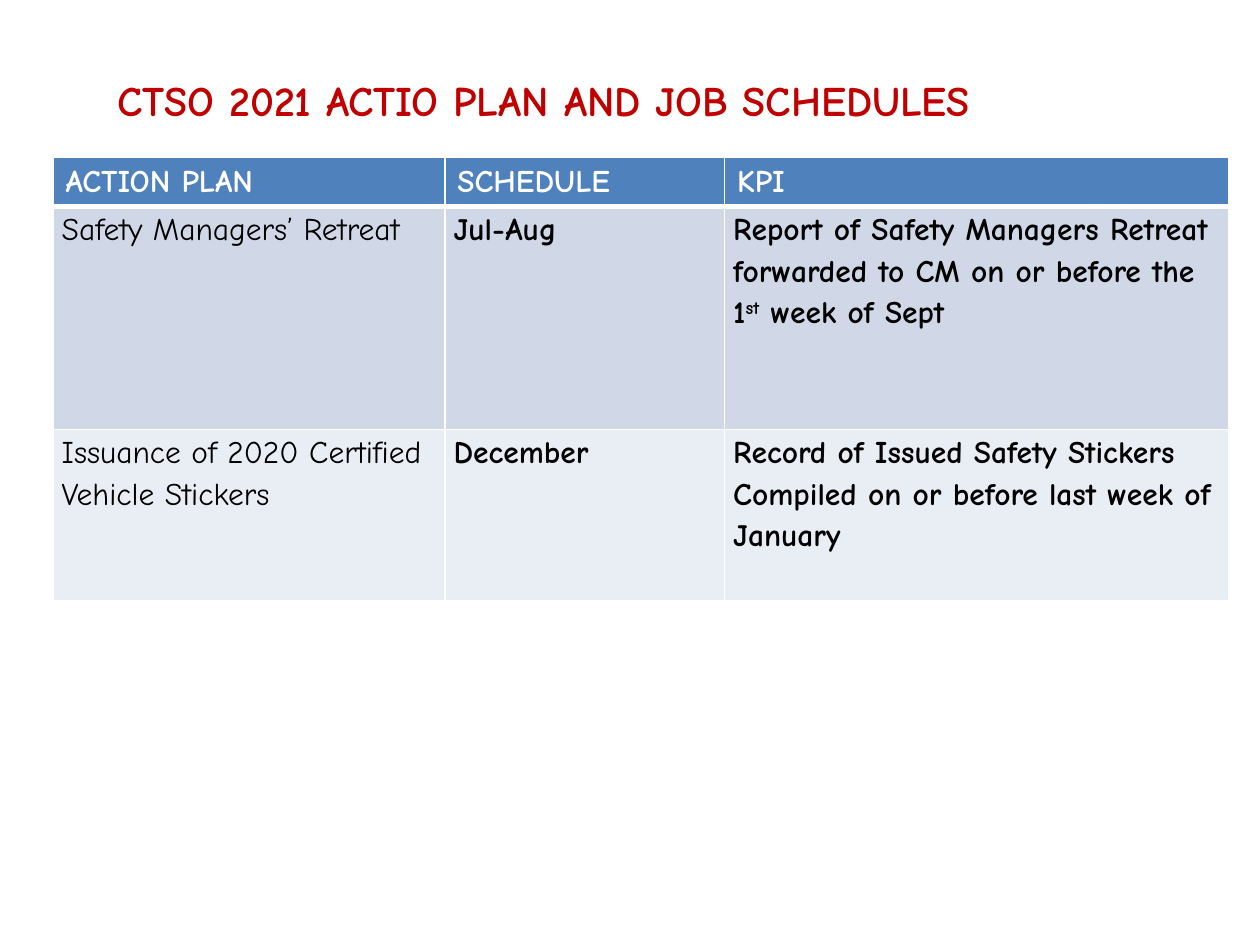
from dataclasses import dataclass

from lxml import etree
from pptx import Presentation
from pptx.dml.color import RGBColor
from pptx.enum import text
from pptx.oxml import ns
from pptx.util import Inches, Pt


@dataclass(frozen=True)
class Theme:
    font: str = "Comic Neue"
    title_size: int = 24
    table_size: int = 18
    title: str = "C00000"
    header: str = "4F81BD"
    bands: tuple = ("D0D8E8", "E9EDF4")
    light: str = "FFFFFF"
    dark: str = "000000"


THEME = Theme()

COLUMN_WIDTHS = (3.11, 2.22, 4)
ROW_HEIGHTS = (0.38, 1.77, 1.36)
HEADERS = ("ACTION PLAN", "SCHEDULE", "KPI")
# Each cell is a list of (text, superscript) runs
PLAN_ROWS = (
    (
        [("Safety Managers’ Retreat", False)],
        [("Jul-Aug", False)],
        [
            ("Report of Safety Managers Retreat forwarded to CM on or before the 1", False),
            ("st", True),
            (" week of Sept", False),
        ],
    ),
    (
        [("Issuance of 2020 Certified Vehicle Stickers", False)],
        [("December", False)],
        [("Record of Issued Safety Stickers Compiled on or before last week of January", False)],
    ),
)


def add_span(para, words, size, color, bold=True, superscript=False):
    span = para.add_run()
    span.text = words
    span.font.name = THEME.font
    span.font.size = Pt(size)
    span.font.bold = bold
    span.font.color.rgb = RGBColor.from_string(color)
    if superscript:
        span.font._element.set("baseline", "30000")


def set_borders(cell, bottom_width):
    """Draw white cell borders; they must precede the fill in the XML."""
    properties = cell._tc.get_or_add_tcPr()
    widths = {"lnL": 1, "lnR": 1, "lnT": 1, "lnB": bottom_width}
    for index, (side, width) in enumerate(widths.items()):
        line = etree.Element(ns.qn(f"a:{side}"), w=str(Pt(width)))
        fill = etree.SubElement(line, ns.qn("a:solidFill"))
        etree.SubElement(fill, ns.qn("a:srgbClr"), val=THEME.light)
        properties.insert(index, line)


def style_cell(cell, color, bottom_width=1):
    cell.fill.solid()
    cell.fill.fore_color.rgb = RGBColor.from_string(color)
    set_borders(cell, bottom_width)


def add_title(page, words):
    box = page.shapes.title
    box.left, box.top = Inches(0.83), Inches(0.42)
    box.width, box.height = Inches(8.5), Inches(0.75)
    box.text_frame.vertical_anchor = text.MSO_ANCHOR.MIDDLE
    para = box.text_frame.paragraphs[0]
    para.alignment = text.PP_ALIGN.LEFT
    add_span(para, words, THEME.title_size, THEME.title)


def fill_header_cell(cell, words):
    style_cell(cell, THEME.header, bottom_width=3)
    add_span(cell.text_frame.paragraphs[0], words, THEME.table_size, THEME.light)


def fill_body_cell(cell, runs, color, bold):
    style_cell(cell, color)
    cell.margin_left = cell.margin_right = Inches(0.07)
    cell.margin_top = cell.margin_bottom = 0
    para = cell.text_frame.paragraphs[0]
    para.line_spacing = 1.15
    for words, superscript in runs:
        add_span(para, words, THEME.table_size, THEME.dark, bold, superscript)


def add_plan_table(page):
    frame = page.shapes.add_table(
        len(ROW_HEIGHTS), len(COLUMN_WIDTHS), Inches(0.42), Inches(1.25),
        Inches(sum(COLUMN_WIDTHS)), Inches(sum(ROW_HEIGHTS)),
    )
    table = frame.table
    for column, width in zip(table.columns, COLUMN_WIDTHS):
        column.width = Inches(width)
    for row, height in zip(table.rows, ROW_HEIGHTS):
        row.height = Inches(height)

    # Header row
    for column, words in enumerate(HEADERS):
        fill_header_cell(table.cell(0, column), words)

    # Body rows: only the action names are in regular weight
    for row, (contents, color) in enumerate(zip(PLAN_ROWS, THEME.bands), start=1):
        for column, runs in enumerate(contents):
            fill_body_cell(table.cell(row, column), runs, color, bold=column > 0)


def main():
    deck = Presentation()
    deck.slide_width, deck.slide_height = Inches(10), Inches(7.5)
    page = deck.slides.add_slide(deck.slide_layouts[5])
    add_title(page, "CTSO 2021 ACTIO PLAN AND JOB SCHEDULES")
    add_plan_table(page)
    deck.save("out.pptx")


if __name__ == "__main__":
    main()
